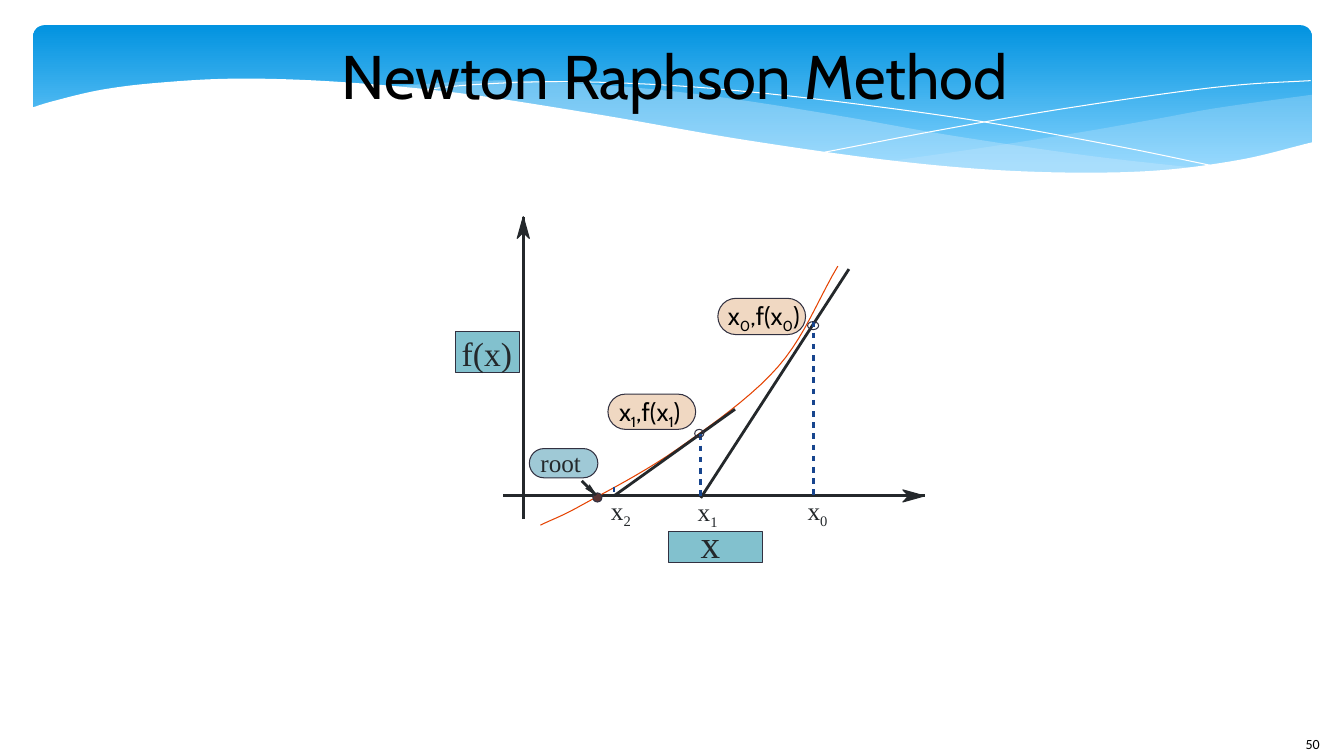
from dataclasses import dataclass
from math import hypot

from lxml.etree import SubElement
from pptx import Presentation
from pptx.dml.color import RGBColor
from pptx.enum.shapes import MSO_CONNECTOR, MSO_SHAPE
from pptx.enum.text import MSO_ANCHOR, PP_ALIGN
from pptx.oxml.ns import qn
from pptx.util import Inches, Pt


@dataclass(frozen=True)
class Theme:
    band_top: str = "0293E0"
    band_bottom: str = "83D3FE"
    wash: str = "C6E7FC"
    paper: str = "FFFFFF"
    black: str = "000000"
    ink: str = "24282B"
    edge: str = "323141"
    dash: str = "17458E"
    function: str = "E54200"
    axis_box: str = "82C1CE"
    point_pill: str = "F0D8C2"
    root_pill: str = "9FC9D6"
    root_dot: str = "5A3433"
    sans: str = "Cabin"
    serif: str = "Times New Roman"
    number_font: str = "Calibri"
    title_size: int = 44
    x_size: int = 28
    fx_size: int = 24
    label_size: int = 18
    number_size: int = 10


def smooth(knots, steps=10):
    ahead = tuple(2 * a - b for a, b in zip(knots[0], knots[1]))
    beyond = tuple(2 * a - b for a, b in zip(knots[-1], knots[-2]))
    chain = [ahead, *knots, beyond]
    trail = [knots[0]]
    for quad in zip(chain, chain[1:], chain[2:], chain[3:]):
        for step in range(1, steps + 1):
            t = step / steps
            trail.append(tuple(
                b + t / 2 * (c - a + t * (2 * a - 5 * b + 4 * c - d + t * (3 * b - a - 3 * c + d)))
                for a, b, c, d in zip(*quad)))
    return trail


class Board:
    """Draws on one slide, measured on a grid of 133.3 columns by 75 rows."""

    columns, rows = 133.3, 75

    def __init__(self, deck, theme):
        self.theme = theme
        self.slide = deck.slides.add_slide(deck.slide_layouts[6])
        self.column = deck.slide_width / self.columns
        self.row = deck.slide_height / self.rows

    def place(self, *lengths):
        return [round(length * (self.row if index % 2 else self.column))
                for index, length in enumerate(lengths)]

    def paint(self, part, fill=None, edge=None, opacity=None):
        part.shadow.inherit = False
        if fill:
            part.fill.solid()
            part.fill.fore_color.rgb = RGBColor.from_string(fill)
        else:
            part.fill.background()
        if opacity:
            tint = part.fill._xPr.find(".//" + qn("a:srgbClr"))
            SubElement(tint, qn("a:alpha")).set("val", str(opacity * 1000))
        if edge:
            part.line.color.rgb = RGBColor.from_string(edge)
            part.line.width = Pt(0)
        else:
            part.line.fill.background()
        return part

    def preset(self, kind, box, fill=None, edge=None, corner=None):
        part = self.slide.shapes.add_shape(kind, *self.place(*box))
        if corner is not None:
            part.adjustments[0] = corner
        return self.paint(part, fill, edge)

    def outline(self, points, fill=None, edge=None, opacity=None):
        start, *others = [self.place(*point) for point in points]
        builder = self.slide.shapes.build_freeform(*start, scale=1.0)
        builder.add_line_segments(others, close=fill is not None)
        return self.paint(builder.convert_to_shape(), fill, edge, opacity)

    def band(self, box, corner):
        band = self.preset(MSO_SHAPE.ROUNDED_RECTANGLE, box, corner=corner)
        band.fill.gradient()
        band.fill.gradient_angle = 270
        shades = ((0, self.theme.band_top), (0.9, self.theme.band_bottom))
        for stop, (position, shade) in zip(band.fill.gradient_stops, shades):
            stop.position = position
            stop.color.rgb = RGBColor.from_string(shade)

    def segment(self, start, end, color):
        line = self.slide.shapes.add_connector(
            MSO_CONNECTOR.STRAIGHT, *self.place(*start, *end))
        line.line.color.rgb = RGBColor.from_string(color)
        line.line.width = Pt(0)
        SubElement(line._element.spPr, qn("a:effectLst"))

    def arrow(self, start, tip, length=2.15, half=0.6, notch=0.73):
        ink = self.theme.ink
        self.segment(start, tip, ink)
        reach = hypot(tip[0] - start[0], tip[1] - start[1])
        ux, uy = (tip[0] - start[0]) / reach, (tip[1] - start[1]) / reach
        corners = ((notch * length, 0), (length, half), (0, 0), (length, -half))
        self.outline([(tip[0] - back * ux - side * uy, tip[1] - back * uy + side * ux)
                      for back, side in corners], ink, ink)

    def dashes(self, x, top, count, pitch=1.11, length=0.55):
        for index in range(count):
            y = top + index * pitch
            self.segment((x, y), (x, y + length), self.theme.dash)

    def text(self, box, words, size, font, color, centred=False, wrap=False, inset=0):
        frame = self.slide.shapes.add_textbox(*self.place(*box)).text_frame
        frame.word_wrap = wrap
        frame.margin_left = frame.margin_right = Inches(2 * inset)
        frame.margin_top = frame.margin_bottom = Inches(inset)
        paragraph = frame.paragraphs[0]
        if centred:
            frame.vertical_anchor = MSO_ANCHOR.MIDDLE
            paragraph.alignment = PP_ALIGN.CENTER
        for index, piece in enumerate(words.split("|")):
            run = paragraph.add_run()
            run.text = piece
            run.font.size = Pt(size)
            run.font.name = font
            run.font.color.rgb = RGBColor.from_string(color)
            if index % 2:
                run._r.get_or_add_rPr().set("baseline", "-25000")


def draw_header(board):
    theme = board.theme
    board.band((3.3, 2.5, 126.8, 15.6), 0.071)
    right_wash = (
        smooth([(130.1, 9.4), (120.8, 10.7), (114.7, 11.8), (107.3, 13.1), (97.2, 14.7), (88.2, 16)])
        + smooth([(88.2, 16), (95.8, 16.7), (102.5, 17.1), (109.9, 17.2), (116.3, 16.9),
                  (123.8, 15.8), (130.1, 14.1)]))
    board.outline(right_wash, theme.wash, opacity=29)
    long_wash = (
        smooth([(119, 16.7), (107.6, 15.4), (94.1, 13.4), (83.9, 11.6), (74, 10), (65.2, 8.9),
                (56, 8.2), (48.2, 8), (38.2, 8.6)])
        + smooth([(38.2, 8.6), (48.3, 9.7), (59.9, 11.6), (70.6, 13.5), (82.4, 15.3),
                  (92.6, 16.5), (103, 17.2), (111.8, 17.2), (119, 16.7)]))
    board.outline(long_wash, theme.wash, opacity=40)
    falling = [(41.2, 9), (47, 8.4), (55.5, 8.1), (65.2, 8.4), (74.2, 9.1), (84.8, 10.3),
               (97, 12), (110.8, 14.5), (121, 16.6)]
    rising = [(81.8, 15.1), (92.7, 13), (103.5, 11.1), (115.5, 9.3), (123.2, 8.4), (130, 8)]
    for strand in (falling, rising):
        board.outline(smooth(strand), edge=theme.paper)
    wave = smooth([(130.2, 14.1), (122.7, 15.9), (113.4, 17), (101.5, 17), (89.1, 16), (74, 13.9),
                   (59.6, 11.4), (45.3, 9.2), (33.3, 8.1), (23.5, 7.8), (15.8, 8.2), (10.1, 8.9),
                   (5.4, 10), (3.1, 10.7)])
    board.outline(wave + [(3.1, 22.4), (130.2, 22.4)], theme.paper)
    board.text((128.5, 72.5, 4.8, 2.5), "50", theme.number_size, theme.number_font,
               theme.black, wrap=True, inset=0.05)
    board.text((26.4, 2.3, 81.1, 10.2), "Newton Raphson Method", theme.title_size, theme.sans,
               theme.black, centred=True, wrap=True)


def draw_graph(board):
    theme = board.theme
    for axis_box in ((66.3, 52.7, 9.3, 3.1), (45.2, 32.9, 6.3, 4.1)):
        board.preset(MSO_SHAPE.RECTANGLE, axis_box, theme.axis_box, theme.edge)
    pills = (((71.2, 29.6, 8.7, 3.6), theme.point_pill),
             ((60.3, 39.1, 8.7, 3.5), theme.point_pill),
             ((52.5, 44.5, 6.8, 2.9), theme.root_pill))
    for box, fill in pills:
        board.preset(MSO_SHAPE.ROUNDED_RECTANGLE, box, fill, theme.edge, 0.5)
    board.arrow((49.9, 49.2), (91.7, 49.2))
    board.arrow((51.9, 51.5), (51.9, 21.5))
    board.outline(smooth([(83.1, 26.4), (77.15, 36.41), (67.15, 44.58), (57.76, 50.08),
                          (53.6, 52.1)]), edge=theme.function)
    for tangent in (((84.2, 26.7), (69.5, 49.4)), ((72.9, 40.6), (60.9, 49.2))):
        board.segment(*tangent, theme.ink)
    for x, top, count in ((80.7, 31.9, 16), (69.5, 43.1, 6), (60.9, 48.3, 1)):
        board.dashes(x, top, count)
    points = (((80.1, 31.9, 1.1, 0.8), None), ((68.9, 42.6, 0.9, 0.8), None),
              ((58.8, 48.9, 0.9, 0.9), theme.root_dot))
    for box, fill in points:
        board.preset(MSO_SHAPE.OVAL, box, fill, theme.edge)
    board.arrow((57.7, 47.7), (59.1, 49.1), 1.15, 0.25, 0.8)

    serif_labels = (((80.1, 49.1, 2.1, 3), "x|0", theme.label_size),
                    ((69.2, 49.2, 2.2, 3), "x|1", theme.label_size),
                    ((60.6, 49.1, 2.1, 3), "x|2", theme.label_size),
                    ((53.6, 44.4, 4.1, 3), "root", theme.label_size),
                    ((69.5, 51.5, 1.9, 4.7), "x", theme.x_size),
                    ((45.8, 33, 5, 4), "f(x)", theme.fx_size))
    for box, words, size in serif_labels:
        board.text(box, words, size, theme.serif, theme.ink)
    for box, words in (((72.2, 29.8, 7.7, 3), "x|0|,f(x|0|)"), ((61.4, 39.3, 7, 3), "x|1|,f(x|1|)")):
        board.text(box, words, theme.label_size, theme.sans, theme.black)


def main():
    deck = Presentation()
    deck.slide_width, deck.slide_height = Inches(13.33), Inches(7.5)
    board = Board(deck, Theme())
    draw_header(board)
    draw_graph(board)
    deck.save("out.pptx")


if __name__ == "__main__":
    main()
